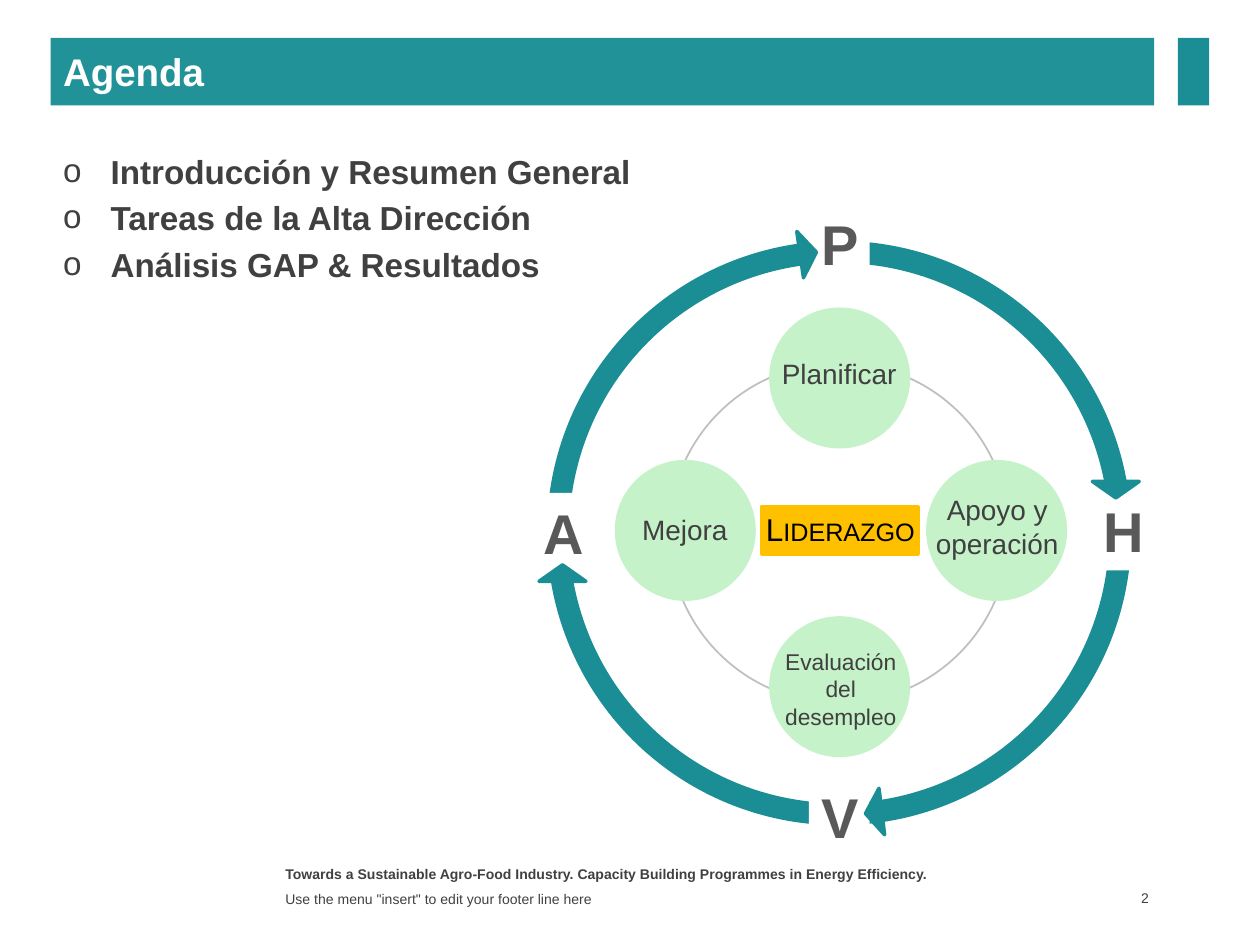
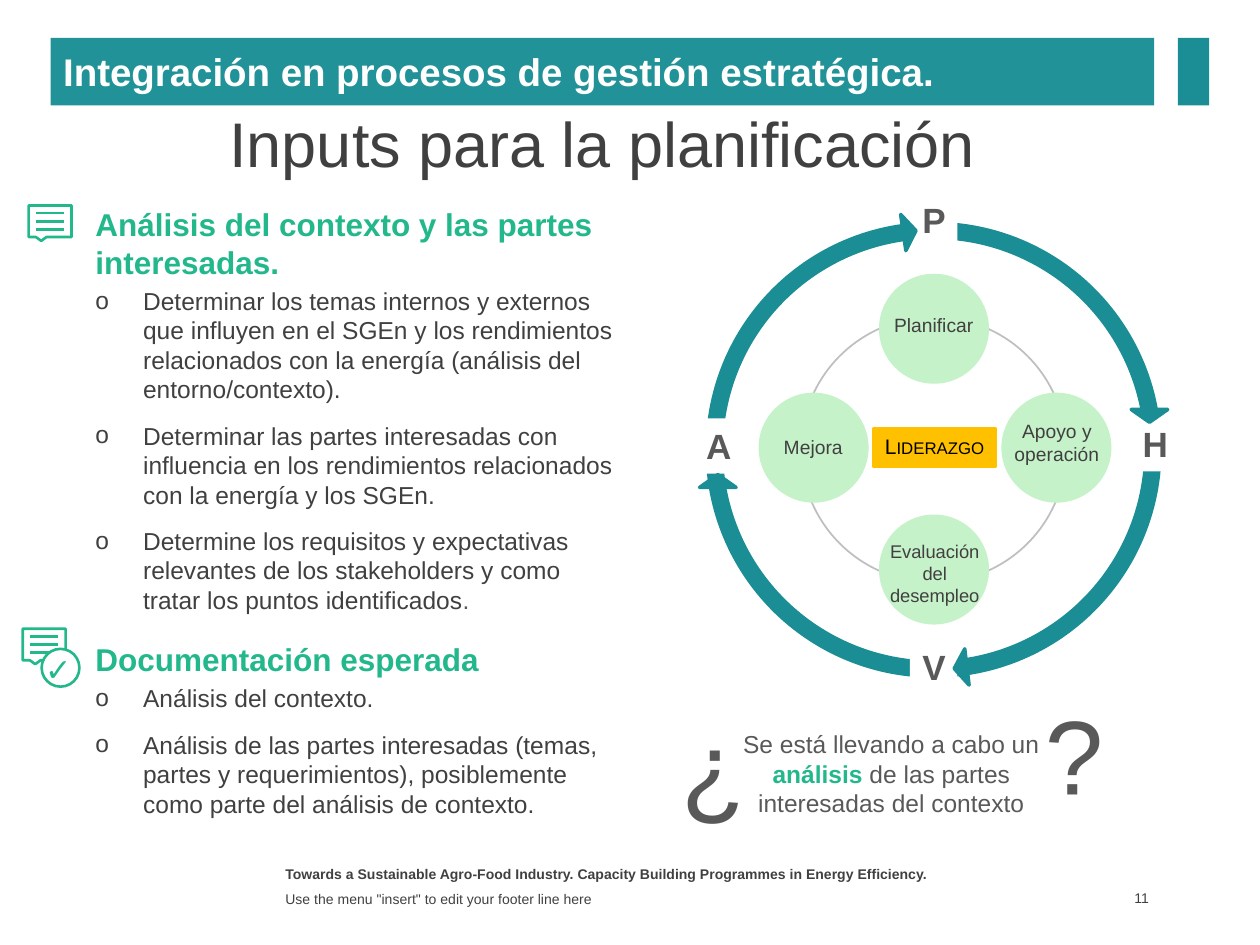
import pptx
import pptx.dml.color
import pptx.enum.shapes
import pptx.enum.text
import pptx.oxml.ns
import pptx.util
import lxml.etree

Pt = pptx.util.Pt
SHAPES = pptx.enum.shapes.MSO_SHAPE
ALIGN = pptx.enum.text.PP_ALIGN
ANCHOR = pptx.enum.text.MSO_ANCHOR
qn = pptx.oxml.ns.qn

FONT = "Arial"
COLOURS = {
    "band": "209298", "teal": "1B8E95", "green": "22B88B", "mint": "C6F2C9",
    "amber": "FFC000", "ring": "BFBFBF", "text": "404040", "grey": "595959",
    "white": "FFFFFF", "black": "000000",
}
PROGRAMME = ("Towards a Sustainable Agro-Food Industry. "
             "Capacity Building Programmes in Energy Efficiency.")
FOOTER = 'Use the menu "insert" to edit your footer line here'
INDENT = 27.2


def rgb(name):
    return pptx.dml.color.RGBColor.from_string(COLOURS[name])


# Text
def style(run, size, colour, bold=False):
    run.font.name = FONT
    run.font.size = Pt(size)
    run.font.bold = bold
    run.font.color.rgb = rgb(colour)


def write(frame, text, size, colour="text", bold=False, align=ALIGN.LEFT,
          anchor=ANCHOR.TOP, wrap=True):
    frame.word_wrap = wrap
    frame.vertical_anchor = anchor
    frame.text = text
    for paragraph in frame.paragraphs:
        paragraph.alignment = align
        for run in paragraph.runs:
            style(run, size, colour, bold)


def add_text(slide, box, text, size, **look):
    label = slide.shapes.add_textbox(*map(Pt, box))
    write(label.text_frame, text, size, **look)
    return label


def append_run(paragraph, text, size, colour, bold=False):
    run = paragraph.add_run()
    run.text = text
    style(run, size, colour, bold)


def set_bullet(paragraph):
    props = paragraph._p.get_or_add_pPr()
    props.set("marL", str(Pt(INDENT)))
    props.set("indent", str(-Pt(INDENT)))
    lxml.etree.SubElement(props, qn("a:buFont")).set("typeface", FONT)
    lxml.etree.SubElement(props, qn("a:buChar")).set("char", "o")


def add_outline(slide, box, items):
    """Each item: text, size, colour, bold, bulleted, space before."""
    frame = slide.shapes.add_textbox(*map(Pt, box)).text_frame
    frame.word_wrap = True
    frame.text = "\n".join(item[0] for item in items)
    for paragraph, (_, size, colour, bold, bulleted, gap) in zip(frame.paragraphs, items):
        if bulleted:
            set_bullet(paragraph)
        paragraph.space_before = Pt(gap)
        style(paragraph.runs[0], size, colour, bold)
    return frame


# Shapes
def add_figure(slide, kind, box, fill=None, line=None, width=1, rotation=0):
    figure = slide.shapes.add_shape(kind, *map(Pt, box))
    figure.shadow.inherit = False
    figure.rotation = rotation
    if fill:
        figure.fill.solid()
        figure.fill.fore_color.rgb = rgb(fill)
    else:
        figure.fill.background()
    if line:
        figure.line.color.rgb = rgb(line)
        figure.line.width = Pt(width)
    else:
        figure.line.fill.background()
    return figure


def add_rule(slide, left, right, y):
    rule = slide.shapes.add_connector(
        pptx.enum.shapes.MSO_CONNECTOR.STRAIGHT, Pt(left), Pt(y), Pt(right), Pt(y))
    rule.line.color.rgb = rgb("green")
    rule.line.width = Pt(1.5)
    lxml.etree.SubElement(rule._element.spPr, qn("a:effectLst"))


def add_note_icon(slide, left, top):
    add_figure(slide, SHAPES.RECTANGULAR_CALLOUT, (left, top, 24.5, 18),
               line="green", width=1.5)
    for row in range(3):
        add_rule(slide, left + 4, left + 20, top + 4.4 + 4.65 * row)


# Frame shared by all slides
def add_page(deck, title, number):
    slide = deck.slides.add_slide(deck.slide_layouts[6])
    band = add_figure(slide, SHAPES.RECTANGLE, (29, 21.6, 630.5, 38.6), "band")
    write(band.text_frame, title, 22, "white", True, anchor=ANCHOR.MIDDLE)
    add_figure(slide, SHAPES.RECTANGLE, (673, 21.6, 18, 38.6), "teal")
    add_text(slide, (156, 491, 396, 15), PROGRAMME, 8, bold=True)
    add_text(slide, (156, 507, 396, 13.7), FOOTER, 8, anchor=ANCHOR.MIDDLE)
    page = add_text(slide, (619, 506, 40.5, 14.4), number, 8,
                    align=ALIGN.RIGHT, anchor=ANCHOR.MIDDLE)
    page.text_frame.margin_right = Pt(3)
    return slide


# PHVA cycle around leadership
def add_cycle(slide, centre, scale, letter_size, letter_height, hub_size,
              step_size, check_size):
    def place(left, top, width, height):
        return (centre[0] + left * scale, centre[1] + top * scale,
                width * scale, height * scale)

    add_figure(slide, SHAPES.RECTANGLE, place(-44, -15.3, 89.3, 27.4),
               "amber", "amber", 2)
    wheel = add_figure(slide, SHAPES.BLOCK_ARC, place(-167, -167, 334, 334),
                       "teal", rotation=270)
    for index, value in enumerate((108, 105.73, 0.04 * 0.95)):
        wheel.adjustments[index] = value

    for letter, left, top in (("P", -17.3, -188.6), ("H", 144, -24.7),
                              ("V", -17.3, 139.2), ("A", -175.7, -23)):
        x, y, width, _ = place(left, top, 34.8, 0)
        tile = add_figure(slide, SHAPES.RECTANGLE, (x, y, width, letter_height), "white")
        write(tile.text_frame, letter, letter_size, "grey", True, ALIGN.CENTER)

    hub = add_text(slide, place(-50.5, -16.6, 102.5, 28.5), "Liderazgo", hub_size,
                   colour="black", align=ALIGN.CENTER)
    hub.text_frame.paragraphs[0].runs[0]._r.get_or_add_rPr().set("cap", "small")
    add_figure(slide, SHAPES.OVAL, place(-97.2, -97.2, 194.4, 194.4), line="ring")

    for left, top, turn in ((-171.5, 18.2, 0), (-31, -164.5, 81.8),
                            (144.7, -29.5, 180), (6.3, 155, 263.1)):
        add_figure(slide, SHAPES.ISOSCELES_TRIANGLE, place(left, top, 26.8, 9.4),
                   "teal", "teal", 2, turn)

    for left, top in ((-40, -128.9), (-40, 47.5), (-128.2, -41.8), (49.7, -41.8)):
        add_figure(slide, SHAPES.OVAL, place(left, top, 80.6, 80.6), "mint")

    for step, box, size in (
            ("Planificar", (-40.4, -104.4, 81, 26.6), step_size),
            ("Apoyo y operación", (47.5, -26.6, 85.7, 46), step_size),
            ("Evaluación\ndel\ndesempleo", (-47, 62, 95.8, 55), check_size),
            ("Mejora", (-131, -15.3, 85.7, 26.6), step_size)):
        add_text(slide, place(*box), step, size, align=ALIGN.CENTER)


def build_agenda(deck):
    slide = add_page(deck, "Agenda", "2")
    topics = ("Introducción y Resumen General", "Tareas de la Alta Dirección",
              "Análisis GAP & Resultados")
    add_outline(slide, (29, 82.8, 341, 89),
                [(topic, 19, "text", True, True, 3.8 if row else 0)
                 for row, topic in enumerate(topics)])
    add_cycle(slide, (479.5, 304.6), 1, 32, 46, 18, 16, 13)


def build_planning(deck):
    slide = add_page(deck, "Integración en procesos de gestión estratégica.", "11")
    add_text(slide, (29, 68.4, 630.5, 26), "Inputs para la planificación", 36,
             align=ALIGN.CENTER, anchor=ANCHOR.MIDDLE)

    # Headings with their points
    sections = (
        ("Análisis del contexto y las partes interesadas.", (
            "Determinar los temas internos y externos que influyen en el SGEn y los "
            "rendimientos relacionados con la energía (análisis del entorno/contexto).",
            "Determinar las partes interesadas con influencia en los rendimientos "
            "relacionados con la energía y los SGEn.",
            "Determine los requisitos y expectativas relevantes de los stakeholders "
            "y como tratar los puntos identificados")),
        ("Documentación esperada", (
            "Análisis del contexto.",
            "Análisis de las partes interesadas (temas, partes y requerimientos), "
            "posiblemente como parte del análisis de contexto.")),
    )
    items = []
    for heading, points in sections:
        items.append((heading, 18, "green", True, False, 14.9 if items else 0))
        items += [(point, 14, "text", False, True, 9.8 if row else 2.8)
                  for row, point in enumerate(points)]
    outline = add_outline(slide, (47.5, 113.8, 312.5, 377), items)
    append_run(outline.paragraphs[3], ".", 14, "grey")

    # Heading icons
    add_note_icon(slide, 16.4, 117.4)
    add_note_icon(slide, 13, 359.3)
    add_figure(slide, SHAPES.OVAL, (23.8, 370.8, 21.6, 21.6), "white", "green", 1.5)
    add_text(slide, (18.7, 368, 28, 28.8), "✓", 18, colour="green", bold=True,
             align=ALIGN.CENTER, wrap=False)

    # Closing question
    for left, top, turn in ((382.3, 397.4, 0), (587.5, 406, 180)):
        mark = add_text(slide, (left, top, 52, 80), "¿", 60, colour="grey", wrap=False)
        mark.rotation = turn
    question = add_text(slide, (408.2, 413.3, 202.3, 58.3), "Se está llevando a cabo un ",
                        14, colour="grey", align=ALIGN.CENTER)
    sentence = question.text_frame.paragraphs[0]
    append_run(sentence, "análisis", 14, "green", True)
    append_run(sentence, " de las partes interesadas del contexto", 14, "grey")

    add_cycle(slide, (533.5, 257), 0.78, 20, 31.7, 12, 11, 10.5)


def main():
    deck = pptx.Presentation()
    deck.slide_width, deck.slide_height = Pt(720), Pt(540)
    build_agenda(deck)
    build_planning(deck)
    deck.save("out.pptx")


if __name__ == "__main__":
    main()
